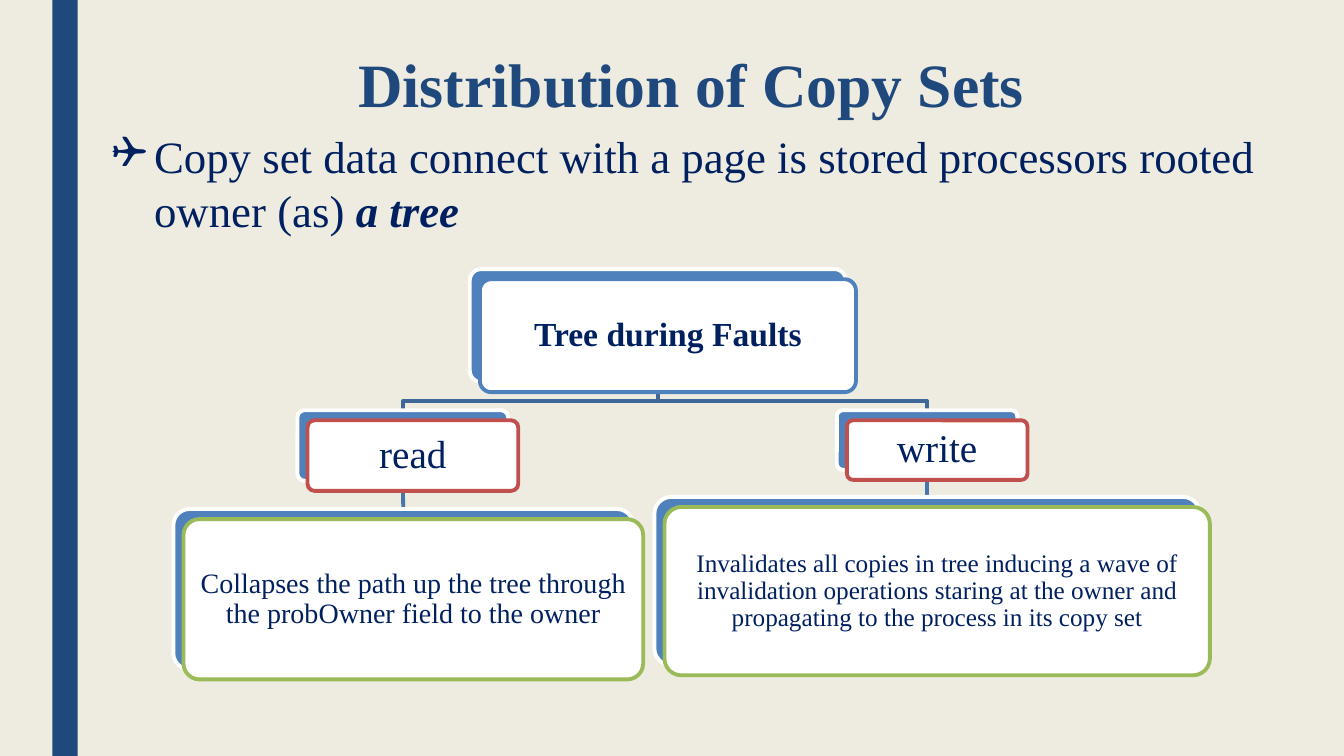
from dataclasses import dataclass

from lxml import etree
from pptx import Presentation
from pptx.dml.color import RGBColor
from pptx.enum.shapes import MSO_CONNECTOR, MSO_SHAPE
from pptx.enum.text import MSO_ANCHOR, PP_ALIGN
from pptx.oxml.ns import qn
from pptx.util import Inches, Pt

RECT = MSO_SHAPE.RECTANGLE
ROUND = MSO_SHAPE.ROUNDED_RECTANGLE
LINE = MSO_CONNECTOR.STRAIGHT
TOP, MIDDLE = MSO_ANCHOR.TOP, MSO_ANCHOR.MIDDLE
LEFT, CENTER = PP_ALIGN.LEFT, PP_ALIGN.CENTER


@dataclass(frozen=True)
class Theme:
    """Colours, type sizes and measures of the slide."""
    font: str = "Times New Roman"
    paper: str = "EEECE1"
    navy: str = "1F497D"
    ink: str = "002060"
    white: str = "FFFFFF"
    blue: str = "4F81BD"
    red: str = "C0504D"
    green: str = "9BBB59"
    fork: str = "3F6797"
    stem: str = "4875AC"
    title: int = 44
    body: int = 32
    root: int = 24
    branch: int = 28
    leaf: int = 20
    small: int = 18
    stroke: float = 2.75
    shift: float = 0.1


THEME = Theme()


def color(code):
    """Turn a hex code into a colour."""
    return RGBColor.from_string(code)


def paint(shape, fill, edge=None):
    """Set fill and outline and drop the shadow."""
    shape.shadow.inherit = False
    shape.fill.solid()
    shape.fill.fore_color.rgb = color(fill)
    if edge:
        stroke(shape, edge)
    else:
        shape.line.fill.background()


def stroke(shape, code):
    """Set the outline colour and width."""
    shape.line.color.rgb = color(code)
    shape.line.width = Pt(THEME.stroke)


def fill_text(frame, runs, size, code, align=CENTER, anchor=TOP, space=1.0):
    """Fill a frame with one paragraph of (text, bold, italic) runs."""
    frame.word_wrap = True
    frame.vertical_anchor = anchor
    para = frame.paragraphs[0]
    para.alignment = align
    para.line_spacing = space
    for text, bold, italic in runs:
        run = para.add_run()
        run.text = text
        font = run.font
        font.name, font.size = THEME.font, Pt(size)
        font.bold, font.italic = bold, italic
        font.color.rgb = color(code)
    return para


def add_text(slide, box, *args, **style):
    """Add a text box and return its paragraph."""
    shape = slide.shapes.add_textbox(*map(Inches, box))
    return fill_text(shape.text_frame, *args, **style)


def add_bullet(para, mark, indent):
    """Give a paragraph a hanging bullet."""
    props = para._p.get_or_add_pPr()
    props.set("marL", str(Inches(indent)))
    props.set("indent", str(-Inches(indent)))
    etree.SubElement(props, qn("a:buFont")).set("typeface", "Wingdings")
    etree.SubElement(props, qn("a:buChar")).set("char", mark)


def add_card(slide, box, edge, text, size, inset, bold=False):
    """Add a card over its blue backing and return the backing."""
    left, top, width, height = box
    shift = THEME.shift
    back, front = [
        slide.shapes.add_shape(ROUND, *map(Inches, (left + d, top + d, width, height)))
        for d in (0, shift)
    ]
    paint(back, THEME.blue, THEME.white)
    paint(front, THEME.white, edge)
    for shape in (back, front):
        shape.adjustments[0] = 0.1
    frame = front.text_frame
    frame.margin_left = frame.margin_right = Inches(inset)
    frame.margin_top = frame.margin_bottom = Inches(inset)
    fill_text(frame, [(text, bold, False)], size, THEME.ink, anchor=MIDDLE, space=0.9)
    return back


def send_back(slide, shape):
    """Move a shape behind all others."""
    slide.shapes.element.insert(2, shape.element)


def add_stem(slide, upper, lower):
    """Join the bottom of one card to the top of the next."""
    line = slide.shapes.add_connector(LINE, 0, 0, 0, 0)
    line.begin_connect(upper, 2)
    line.end_connect(lower, 0)
    stroke(line, THEME.stem)
    etree.SubElement(line.element.spPr, qn("a:effectLst"))
    send_back(slide, line)


def add_fork(slide, root, child):
    """Draw the bent line from the root to a branch."""
    start, end = (card.left + card.width // 2 for card in (root, child))
    foot, bend = root.top + root.height, Inches(3.98)
    route = slide.shapes.build_freeform(start, foot)
    route.add_line_segments([(start, bend), (end, bend), (end, child.top)], close=False)
    shape = route.convert_to_shape()
    shape.shadow.inherit = False
    shape.fill.background()
    stroke(shape, THEME.fork)
    send_back(slide, shape)


def main():
    """Build and save the slide."""
    deck = Presentation()
    deck.slide_width, deck.slide_height = Inches(13.33), Inches(7.5)
    slide = deck.slides.add_slide(deck.slide_layouts[6])
    slide.background.fill.solid()
    slide.background.fill.fore_color.rgb = color(THEME.paper)

    bar = slide.shapes.add_shape(RECT, Inches(0.52), 0, Inches(0.25), Inches(7.5))
    paint(bar, THEME.navy)
    add_text(slide, (1.61, 0.41, 10.5, 0.99),
             [("Distribution of Copy Sets", True, False)], THEME.title, THEME.navy)
    lead = [
        ("Copy set data connect with a page is stored processors rooted owner (as) ",
         False, False),
        ("a tree", True, True),
    ]
    para = add_text(slide, (1.01, 1.23, 12.17, 5.99), lead,
                    THEME.body, THEME.ink, align=LEFT)
    add_bullet(para, "❑", 0.42)

    root = add_card(slide, (4.66, 2.67, 3.73, 1.12), THEME.blue,
                    "Tree during Faults", THEME.root, 0.1, bold=True)
    sides = [
        ((2.95, 4.07, 2.09, 0.7), "read", (1.72, 5.05, 4.56, 1.59),
         "Collapses the path up the tree through the probOwner field to the owner",
         THEME.leaf, 0.08),
        ((8.3, 4.07, 1.79, 0.59), "write", (6.49, 4.93, 5.41, 1.67),
         "Invalidates all copies in tree inducing a wave of invalidation operations "
         "staring at the owner and propagating to the process in its copy set",
         THEME.small, 0.07),
    ]
    for head, name, box, text, size, inset in sides:
        branch = add_card(slide, head, THEME.red, name, THEME.branch, 0.12)
        leaf = add_card(slide, box, THEME.green, text, size, inset)
        add_fork(slide, root, branch)
        add_stem(slide, branch, leaf)
    deck.save("out.pptx")


if __name__ == "__main__":
    main()
